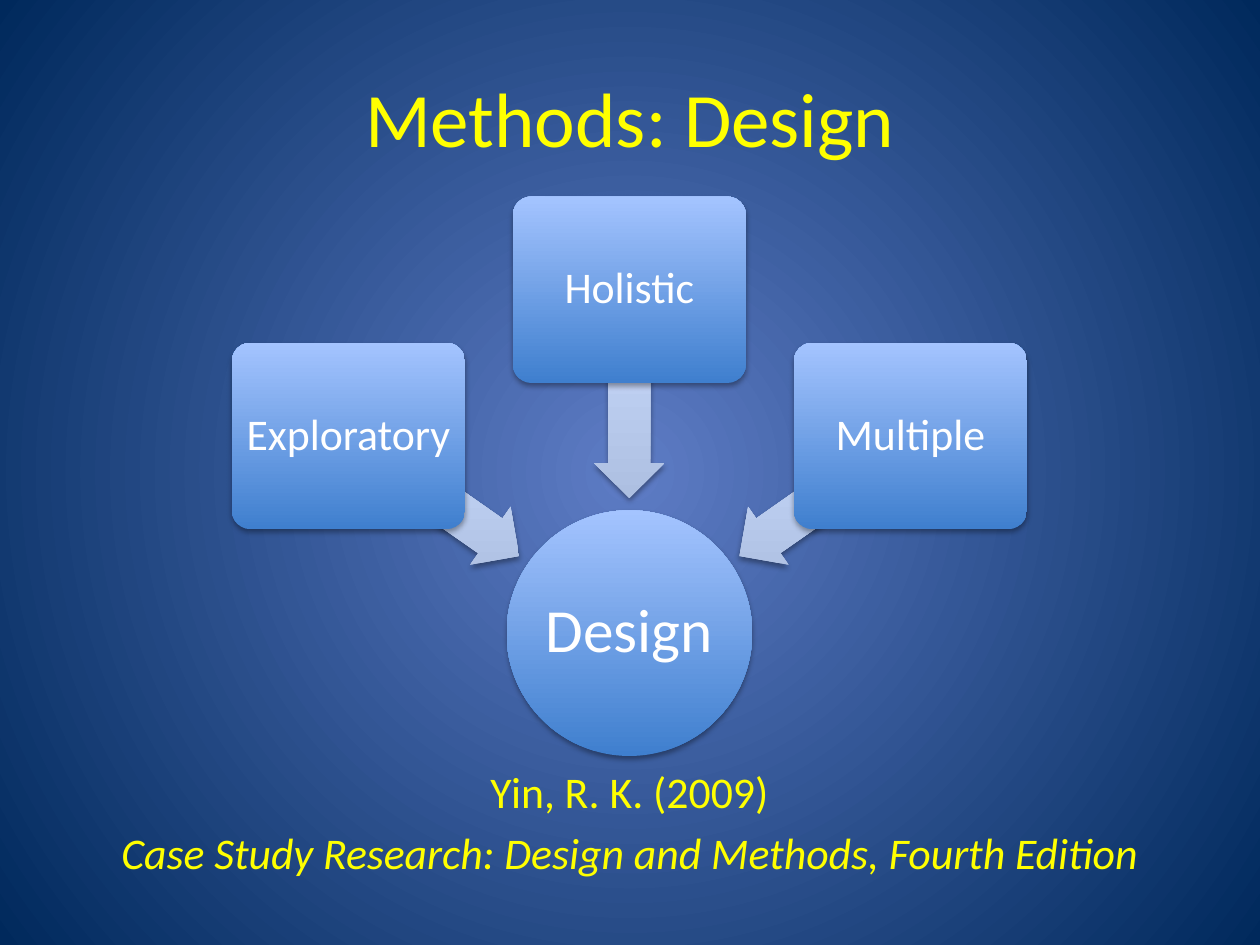
from collections import namedtuple

import pptx
import pptx.dml.color
import pptx.enum.shapes
import pptx.enum.text
import pptx.oxml
import pptx.oxml.ns
import pptx.util

COLORS = {
    "glow": "5E7CC5", "night": "00295C", "yellow": "FFFF00", "white": "FFFFFF",
    "card_low": "3F7FCE", "card_high": "A4C4FF",
    "arrow_low": "ADBFE1", "arrow_high": "CCDDFF", "shadow": "000000",
}
FONT = "Calibri"
COLUMNS, ROWS = 100, 75
CELL = pptx.util.Inches(0.1)
SHAPES = pptx.enum.shapes.MSO_SHAPE
DRAWING_NS = pptx.oxml.ns.nsdecls("a")

Box = namedtuple("Box", "left top width height")


def emu(box):
    return [round(cells * CELL) for cells in box]


def centred(x, y, width, height):
    return Box(x - width / 2, y - height / 2, width, height)


def apply_gradient(fill, element, start, end):
    """Set a two-stop gradient that runs upwards and ignores rotation."""
    fill.gradient()
    fill.gradient_angle = 90
    for stop, name in zip(fill.gradient_stops, (start, end)):
        stop.color.rgb = pptx.dml.color.RGBColor.from_string(COLORS[name])
    fill.gradient_stops[0].position = 0
    fill.gradient_stops[1].position = 1
    gradient = next(element.iter(pptx.oxml.ns.qn("a:gradFill")))
    gradient.set("rotWithShape", "0")
    return gradient


def paint_background(slide):
    gradient = apply_gradient(slide.background.fill, slide._element, "glow", "night")
    linear = gradient.find(pptx.oxml.ns.qn("a:lin"))
    gradient.replace(linear, pptx.oxml.parse_xml(
        f'<a:path {DRAWING_NS} path="circle">'
        '<a:fillToRect l="50000" t="50000" r="50000" b="50000"/></a:path>'))


def write(frame, lines, size, color, anchor, inset=None):
    frame.word_wrap = True
    frame.vertical_anchor = anchor
    frame.text = "\n".join(lines)
    if inset is not None:
        frame.margin_left = frame.margin_right = pptx.util.Inches(inset)
        frame.margin_top = frame.margin_bottom = pptx.util.Inches(inset)
    for paragraph in frame.paragraphs:
        paragraph.alignment = pptx.enum.text.PP_ALIGN.CENTER
        for run in paragraph.runs:
            run.font.name = FONT
            run.font.size = pptx.util.Pt(size)
            run.font.color.rgb = pptx.dml.color.RGBColor.from_string(COLORS[color])


def add_raised(slide, kind, box, tone, adjustments=()):
    """Add a borderless gradient shape with a soft shadow below it."""
    shape = slide.shapes.add_shape(kind, *emu(box))
    for index, value in enumerate(adjustments):
        shape.adjustments[index] = value
    properties = shape._element.spPr
    apply_gradient(shape.fill, properties, f"{tone}_low", f"{tone}_high")
    shape.line.fill.background()
    shape.shadow.inherit = False
    properties.find(pptx.oxml.ns.qn("a:effectLst")).append(pptx.oxml.parse_xml(
        f'<a:outerShdw {DRAWING_NS} blurRad="40000" dist="23000" dir="5400000" '
        f'rotWithShape="0"><a:srgbClr val="{COLORS["shadow"]}">'
        '<a:alpha val="35000"/></a:srgbClr></a:outerShdw>'))
    return shape


def add_label(shape, text, size, inset):
    write(shape.text_frame, [text], size, "white",
          pptx.enum.text.MSO_ANCHOR.MIDDLE, inset)
    shape.text_frame.paragraphs[0].line_spacing = 0.9


def add_title(slide, box, text):
    title = slide.shapes.add_textbox(*emu(box))
    write(title.text_frame, [text], 44, "yellow", pptx.enum.text.MSO_ANCHOR.MIDDLE)


def add_citation(slide, box, author, work):
    citation = slide.shapes.add_textbox(*emu(box))
    frame = citation.text_frame
    write(frame, [author, work], 25, "yellow", pptx.enum.text.MSO_ANCHOR.TOP)
    for paragraph in frame.paragraphs:
        paragraph.space_before = pptx.util.Pt(5)
    frame.paragraphs[1].runs[0].font.italic = True


def add_converging_diagram(slide, box, hub_text, aspects):
    """Place three aspect cards around the top, each pointing at the hub."""
    middle = box.left + box.width / 2
    hub_size = 19.5
    card_width, card_height = 18.5, box.height / 3
    card_pitch = (box.width - card_width) / 2
    arrow_pitch = 15.5

    hub_box = Box(middle - hub_size / 2, box.top + box.height - hub_size,
                  hub_size, hub_size)
    hub = add_raised(slide, SHAPES.OVAL, hub_box, "card")
    add_label(hub, hub_text, 35, 0.02)

    for side, aspect in zip((-1, 0, 1), aspects):
        arrow_y, card_y = (23.8, 19) if side else (15.7, 7.4)
        arrow = add_raised(
            slide, SHAPES.LEFT_ARROW,
            centred(middle + side * arrow_pitch, box.top + arrow_y, 16.5, 5.6),
            "arrow", (0.6, 0.5))
        arrow.rotation = 270 + 55 * side
        card = add_raised(
            slide, SHAPES.ROUNDED_RECTANGLE,
            centred(middle + side * card_pitch, box.top + card_y,
                    card_width, card_height),
            "card", (0.1,))
        add_label(card, aspect, 25, 0.05)


def main():
    presentation = pptx.Presentation()
    presentation.slide_width = COLUMNS * CELL
    presentation.slide_height = ROWS * CELL
    slide = presentation.slides.add_slide(presentation.slide_layouts[6])

    paint_background(slide)
    add_title(slide, Box(5, 3, 90, 12.5), "Methods: Design")
    add_citation(slide, Box(7.8, 60.2, 84.3, 12.5), "Yin, R. K. (2009)",
                 "Case Study Research: Design and Methods, Fourth Edition")
    add_converging_diagram(slide, Box(18.4, 15.6, 63.1, 44.4), "Design",
                           ("Exploratory", "Holistic", "Multiple"))
    presentation.save("out.pptx")


if __name__ == "__main__":
    main()
